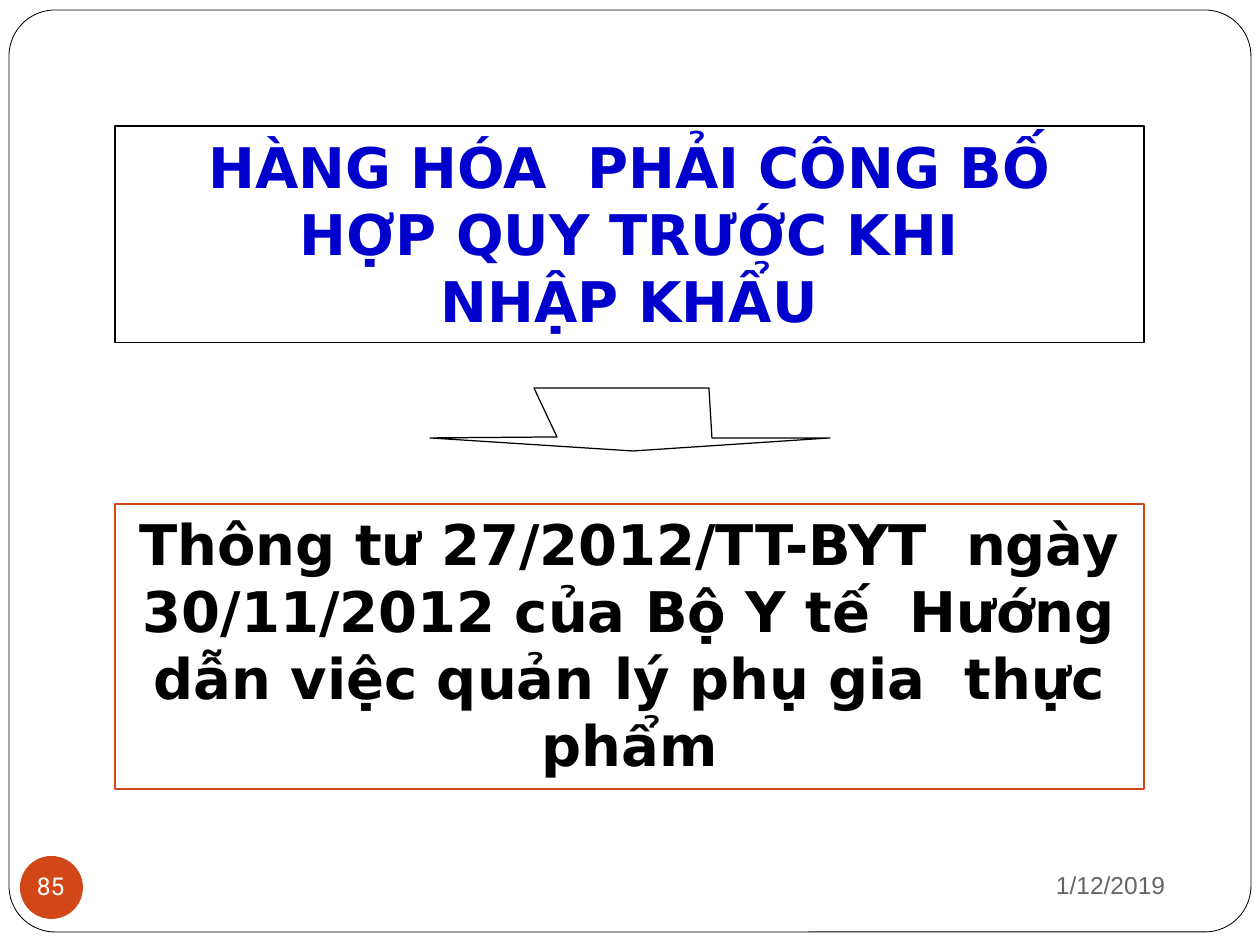
from dataclasses import dataclass
from lxml.etree import SubElement
from pptx import Presentation
from pptx.dml.color import RGBColor
from pptx.enum.shapes import MSO_SHAPE as Preset
from pptx.enum.text import MSO_ANCHOR as Anchor, PP_ALIGN as Align
from pptx.oxml.ns import qn
from pptx.util import Pt

PX = 914400 / 126


@dataclass(frozen=True)
class Theme:
    ink: str = "000000"
    heading: str = "0000CC"
    accent: str = "D24717"
    muted: str = "696363"
    white: str = "FFFFFF"
    main_font: str = "DejaVu Sans"
    date_font: str = "Arial"
    number_font: str = "Roboto"
    main_size: int = 32
    footer_size: int = 14
    thin: float = 0.48
    line: float = 0.72


THEME = Theme()


def px(*lengths):
    return [round(length * PX) for length in lengths]


def paint(shape, line=None, width=THEME.line, fill=None):
    shape.shadow.inherit = False
    if fill:
        shape.fill.solid()
        shape.fill.fore_color.rgb = RGBColor.from_string(fill)
    else:
        shape.fill.background()
    if line:
        shape.line.color.rgb = RGBColor.from_string(line)
        shape.line.width = Pt(width)
    else:
        shape.line.fill.background()
    return shape


def add_preset(slide, preset, box, **look):
    return paint(slide.shapes.add_shape(preset, *px(*box)), **look)


def add_arrow(slide, points):
    builder = slide.shapes.build_freeform(*points[0], scale=PX)
    builder.add_line_segments(points[1:], close=True)
    return paint(builder.convert_to_shape(), line=THEME.ink)


def write(shape, text, font, size, color, bold=False, align=Align.LEFT, top=0):
    frame = shape.text_frame
    frame.word_wrap = True
    frame.vertical_anchor = Anchor.TOP
    frame.margin_left = frame.margin_right = frame.margin_bottom = 0
    frame.margin_top = px(top)[0]
    frame.text = text
    paragraph = frame.paragraphs[0]
    paragraph.alignment = align
    paragraph.font.name = font
    paragraph.font.size = Pt(size)
    paragraph.font.bold = bold
    paragraph.font.color.rgb = RGBColor.from_string(color)
    return paragraph


def add_title(slide, text, box, tab):
    title = slide.shapes.title
    title.left, title.top, title.width, title.height = px(*box)
    paragraph = write(title, text, THEME.main_font, THEME.main_size,
                      THEME.heading, bold=True, align=Align.CENTER)
    properties = paragraph._p.get_or_add_pPr()
    stops = SubElement(properties, qn("a:tabLst"))
    SubElement(stops, qn("a:tab"), pos=str(px(tab)[0]), algn="l")
    properties.insert_element_before(stops, "a:defRPr", "a:extLst")


def add_footer(slide, text, box, font, color):
    label = slide.shapes.add_textbox(*px(*box))
    write(label, text, font, THEME.footer_size, color).line_spacing = Pt(15.2)


def main():
    deck = Presentation()
    deck.slide_width, deck.slide_height = px(1260, 945)
    slide = deck.slides.add_slide(deck.slide_layouts[5])

    border = add_preset(slide, Preset.ROUNDED_RECTANGLE, (9, 10, 1242, 922),
                        line=THEME.ink, width=THEME.thin)
    border.adjustments[0] = 0.05

    add_preset(slide, Preset.RECTANGLE, (115, 126, 1029, 217), line=THEME.ink)
    add_title(slide, "HÀNG HÓA\tPHẢI CÔNG BỐ\vHỢP QUY TRƯỚC KHI\vNHẬP KHẨU",
              (204, 132, 851, 200), tab=379)

    add_arrow(slide, [(534, 388), (557, 437), (430, 438), (633, 451),
                      (830, 438), (712, 438), (709, 388)])

    circular = add_preset(slide, Preset.RECTANGLE, (115, 504, 1029, 285),
                          line=THEME.accent)
    write(circular, "Thông tư 27/2012/TT-BYT  ngày 30/11/2012 của Bộ Y tế  "
                    "Hướng dẫn việc quản lý phụ gia  thực phẩm",
          THEME.main_font, THEME.main_size, THEME.ink, bold=True,
          align=Align.CENTER, top=5).space_before = Pt(3.1)

    add_preset(slide, Preset.OVAL, (20, 856, 63, 63), fill=THEME.accent)
    add_footer(slide, "1/12/2019", (1056, 873, 125, 28),
               THEME.date_font, THEME.muted)
    add_footer(slide, "85", (37, 874, 40, 28),
               THEME.number_font, THEME.white)

    deck.save("out.pptx")


if __name__ == "__main__":
    main()
